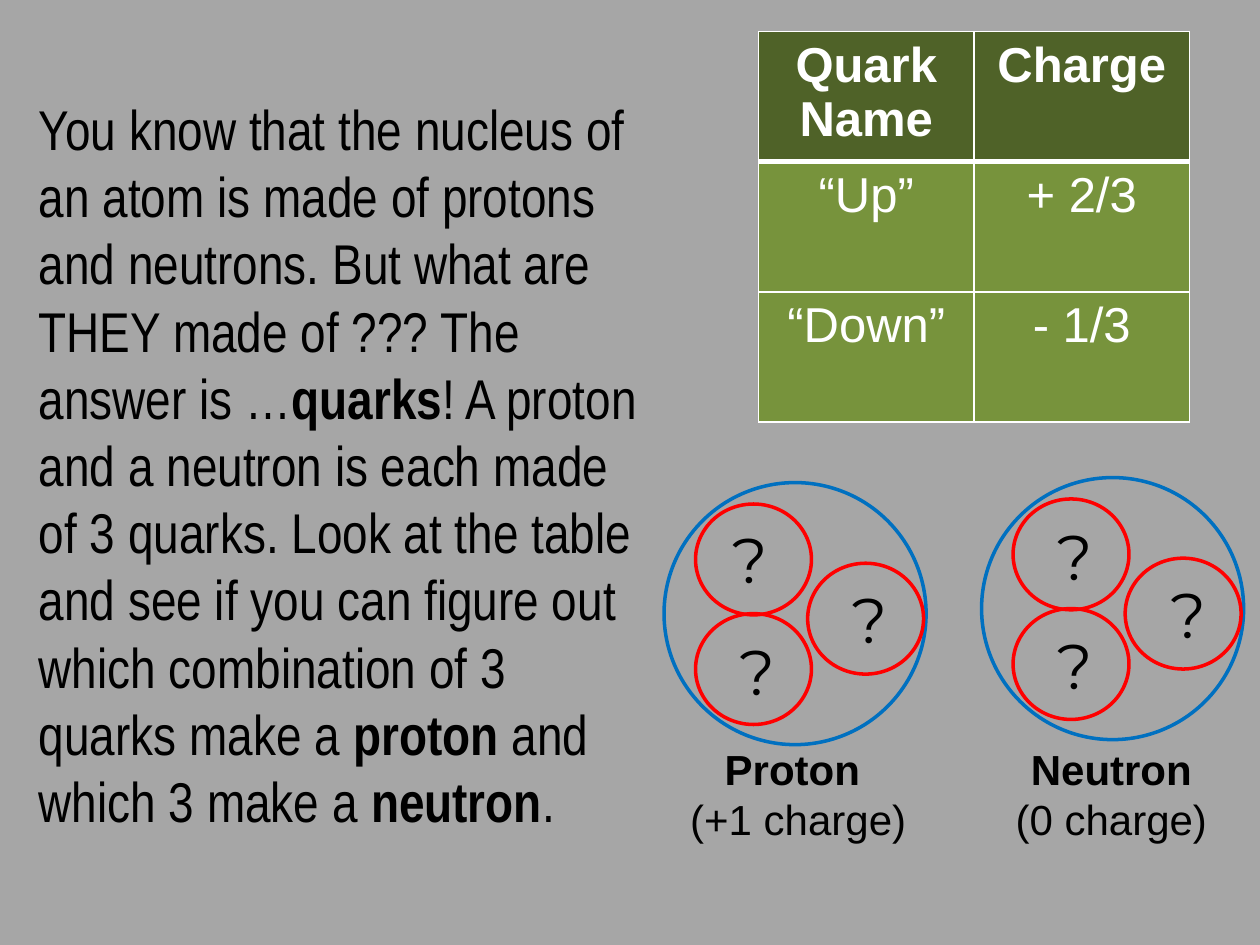
import pptx
import pptx.dml.color
import pptx.enum.shapes
import pptx.enum.text
import pptx.oxml.ns
import pptx.util
from lxml import etree

Inches = pptx.util.Inches
Pt = pptx.util.Pt
CENTER = pptx.enum.text.PP_ALIGN.CENTER
LEFT = pptx.enum.text.PP_ALIGN.LEFT

COLORS = {
    "background": "A6A6A6",
    "text": "000000",
    "table_text": "FFFFFF",
    "border": "FFFFFF",
    "header": "4F6228",
    "row": "77933C",
    "nucleon": "0070C0",
    "quark": "FF0000",
}

# Each paragraph is a list of (text, bold) runs.
EXPLANATION = [[
    ("You know that the nucleus of an atom is made of protons and neutrons. "
     "But what are THEY made of ??? The answer is …", False),
    ("quarks", True),
    ("! A proton and a neutron is each made of 3 quarks. Look at the table and "
     "see if you can figure out which combination of 3 quarks make a ", False),
    ("proton", True),
    (" and which 3 make a ", False),
    ("neutron", True),
    (".", False),
]]

QUARK_TABLE = [
    ("Quark Name", "Charge"),
    ("“Up”", "+ 2/3"),
    ("“Down”", "- 1/3"),
]
TABLE_BOX = (6.02, 0.25, 3.42, 3.1)

# Quark and mark positions are offsets from the corner of the nucleon.
NUCLEON_SIZE = 2.08
QUARK_SIZE = (0.92, 0.88)
QUARK_OFFSETS = [(1.14, 0.64), (0.25, 1.04), (0.25, 0.17)]
MARK_SIZE = (0.42, 0.71)
NUCLEONS = [
    {"corner": (5.27, 3.83),
     "marks": [(0.44, 0.25), (0.5, 1.14), (1.39, 0.73)],
     "label": [[("Proton ", True)], [("(+1 charge)", False)]],
     "label_box": (5.27, 5.85, 2.13, 0.91)},
    {"corner": (7.79, 3.79),
     "marks": [(0.5, 0.27), (0.5, 1.13), (1.4, 0.73)],
     "label": [[("Neutron", True)], [("(0 charge)", False)]],
     "label_box": (7.79, 5.85, 2.06, 0.91)},
]


def rgb(name):
    return pptx.dml.color.RGBColor.from_string(COLORS[name])


def to_inches(box):
    return [Inches(length) for length in box]


def format_run(run, font_name, size, color, bold):
    run.font.name = font_name
    run.font.size = Pt(size)
    run.font.bold = bold
    run.font.color.rgb = rgb(color)


def add_text(shapes, box, paragraphs, font_name, size, alignment=LEFT):
    text_frame = shapes.add_textbox(*to_inches(box)).text_frame
    text_frame.word_wrap = True
    for index, runs in enumerate(paragraphs):
        paragraph = text_frame.add_paragraph() if index else text_frame.paragraphs[0]
        paragraph.alignment = alignment
        for text, bold in runs:
            run = paragraph.add_run()
            run.text = text
            format_run(run, font_name, size, "text", bold)


def add_circle(shapes, box, color):
    circle = shapes.add_shape(pptx.enum.shapes.MSO_SHAPE.OVAL, *to_inches(box))
    circle.shadow.inherit = False
    circle.fill.background()
    circle.line.color.rgb = rgb(color)
    circle.line.width = Pt(2)


def set_border(cell, side, width):
    """Draw one cell side: L, R, T or B."""
    properties = cell._tc.get_or_add_tcPr()
    qn = pptx.oxml.ns.qn
    line = etree.SubElement(properties, qn(f"a:ln{side}"), w=str(Pt(width)))
    fill = etree.SubElement(line, qn("a:solidFill"))
    etree.SubElement(fill, qn("a:srgbClr"), val=COLORS["border"])


def add_quark_table(shapes):
    rows, columns = len(QUARK_TABLE), len(QUARK_TABLE[0])
    table = shapes.add_table(rows, columns, *to_inches(TABLE_BOX)).table
    for row_index, values in enumerate(QUARK_TABLE):
        is_header = row_index == 0
        for column_index, value in enumerate(values):
            cell = table.cell(row_index, column_index)
            for side in "LRTB":
                thick = (row_index, side) in [(0, "B"), (1, "T")]
                set_border(cell, side, 3 if thick else 1)
            cell.fill.solid()
            cell.fill.fore_color.rgb = rgb("header" if is_header else "row")
            cell.text_frame.text = value
            paragraph = cell.text_frame.paragraphs[0]
            paragraph.alignment = CENTER
            format_run(paragraph.runs[0], "Arial", 28, "table_text", is_header)


def add_nucleon(shapes, nucleon):
    left, top = nucleon["corner"]
    group = shapes.add_group_shape().shapes
    add_circle(group, (left, top, NUCLEON_SIZE, NUCLEON_SIZE), "nucleon")
    for x, y in QUARK_OFFSETS:
        add_circle(group, (left + x, top + y, *QUARK_SIZE), "quark")
    for x, y in nucleon["marks"]:
        add_text(group, (left + x, top + y, *MARK_SIZE), [[("?", False)]],
                 "Montserrat", 36)


def main():
    presentation = pptx.Presentation()
    presentation.slide_width = Inches(10)
    presentation.slide_height = Inches(7.5)
    slide = presentation.slides.add_slide(presentation.slide_layouts[6])
    slide.background.fill.solid()
    slide.background.fill.fore_color.rgb = rgb("background")

    add_text(slide.shapes, (0.21, 0.7, 5.04, 6.02), EXPLANATION, "Arial Narrow", 32)
    add_quark_table(slide.shapes)
    for nucleon in NUCLEONS:
        add_text(slide.shapes, nucleon["label_box"], nucleon["label"], "Arial", 24, CENTER)
        add_nucleon(slide.shapes, nucleon)
    presentation.save("out.pptx")


if __name__ == "__main__":
    main()
